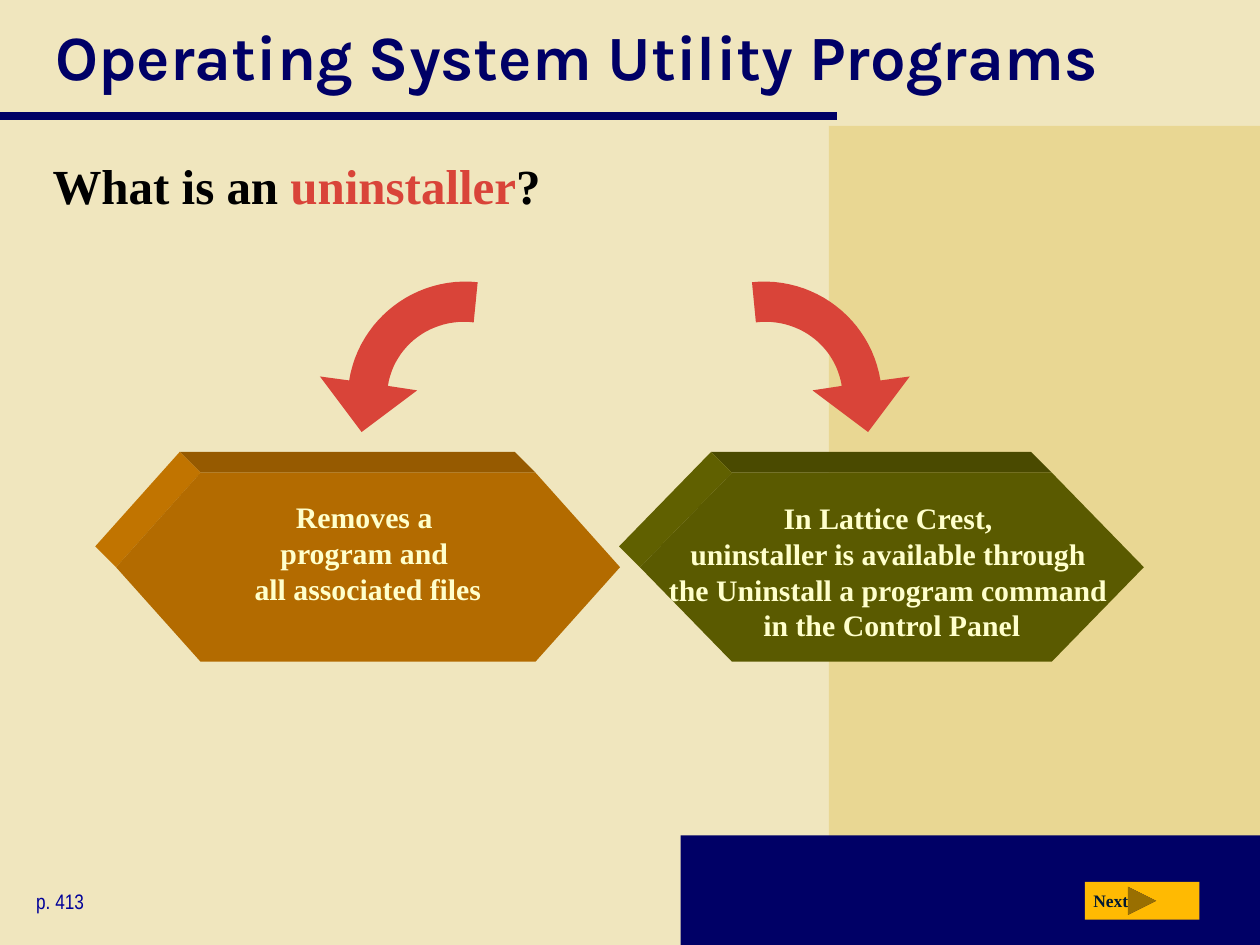
from pptx import Presentation
from pptx.dml.color import RGBColor
from pptx.enum.shapes import MSO_CONNECTOR, MSO_SHAPE
from pptx.enum.text import MSO_ANCHOR, PP_ALIGN
from pptx.oxml.ns import qn
from pptx.util import Cm, Pt
from lxml import etree

RECTANGLE = MSO_SHAPE.RECTANGLE
HEXAGON = MSO_SHAPE.HEXAGON
NEXT_BUTTON = MSO_SHAPE.ACTION_BUTTON_FORWARD_OR_NEXT
STRAIGHT = MSO_CONNECTOR.STRAIGHT
TOP, MIDDLE = MSO_ANCHOR.TOP, MSO_ANCHOR.MIDDLE
LEFT, CENTER = PP_ALIGN.LEFT, PP_ALIGN.CENTER

NAVY, RED, CREAM = "000066", "D94439", "FFFFCC"
SERIF = "Times New Roman"
DEPTH = 0.42
MIRROR_SUM = 24.79


def color(code):
    return RGBColor.from_string(code)


def write(box, text, size=17, font=SERIF, fill="000000", bold=True,
          align=LEFT, anchor=TOP, wrap=True, accents=None):
    frame = box.text_frame
    frame.word_wrap = wrap
    frame.vertical_anchor = anchor
    para = frame.paragraphs[0]
    para.alignment = align
    pieces = text if isinstance(text, list) else [text]
    for piece in pieces:
        for index, line in enumerate(piece.split("\n")):
            if index:
                para.add_line_break()
            span = para.add_run()
            span.text = line
            span.font.name = font
            span.font.size = Pt(size)
            span.font.bold = bold
            span.font.color.rgb = color((accents or {}).get(piece, fill))


def bezier(start, first, second, end, steps=24):
    points = []
    for step in range(steps + 1):
        t = step / steps
        weights = ((1 - t) ** 3, 3 * t * (1 - t) ** 2, 3 * t * t * (1 - t), t ** 3)
        points.append(tuple(
            sum(weight * point[axis] for weight, point in zip(weights, (start, first, second, end)))
            for axis in (0, 1)))
    return points


class SlideBuilder:
    """Hold the style and the current slide, and draw each kind of element."""

    def __init__(self, deck, background):
        self.page = deck.slides.add_slide(deck.slide_layouts[5])
        self.page.background.fill.solid()
        self.page.background.fill.fore_color.rgb = color(background)

    def paint(self, shape, fill):
        shape.shadow.inherit = False
        shape.fill.solid()
        shape.fill.fore_color.rgb = color(fill)
        shape.line.fill.background()
        return shape

    def title(self, text, left, top, width, height, **style):
        box = self.page.shapes.title
        box.left, box.top, box.width, box.height = map(Cm, (left, top, width, height))
        write(box, text, **style)

    def shape(self, kind, left, top, width, height, fill):
        shape = self.page.shapes.add_shape(kind, *map(Cm, (left, top, width, height)))
        return self.paint(shape, fill)

    def text(self, text, left, top, width, height, **style):
        box = self.page.shapes.add_textbox(*map(Cm, (left, top, width, height)))
        write(box, text, **style)
        return box

    def rule(self, left, top, right, fill, weight):
        line = self.page.shapes.add_connector(STRAIGHT, Cm(left), Cm(top), Cm(right), Cm(top))
        line.line.color.rgb = color(fill)
        line.line.width = Pt(weight)
        etree.SubElement(line._element.spPr, qn("a:effectLst"))

    def polygon(self, points, fill):
        corners = [(Cm(x), Cm(y)) for x, y in points]
        builder = self.page.shapes.build_freeform(*corners[0], scale=1.0)
        builder.add_line_segments(corners[1:], close=True)
        return self.paint(builder.convert_to_shape(), fill)

    def block(self, text, left, slant, front, top_face, side_face):
        top, width, height = 9.53, 10.16, 3.81
        cut = slant * height
        tip = (left, top + height / 2)
        near, far = (left + cut, top), (left + width - cut, top)
        for edge, fill in (((near, far), top_face), ((tip, near), side_face)):
            back = [(x - DEPTH, y - DEPTH) for x, y in edge]
            self.polygon(back + list(reversed(edge)), fill)
        face = self.shape(HEXAGON, left, top, width, height, front)
        face.adjustments[0] = slant
        face.text_frame.margin_top = face.text_frame.margin_bottom = 0
        write(face, text, fill=CREAM, align=CENTER, wrap=False)

    def curved_arrow(self, mirrored):
        outer = bezier((9.63, 5.69), (8.38, 5.56), (7.24, 6.43), (7.04, 7.67))
        head = [(6.45, 7.59), (7.29, 8.71), (8.41, 7.87)]
        inner = bezier((7.82, 7.78), (7.95, 6.96), (8.71, 6.4), (9.55, 6.5))
        points = outer + head + inner
        if mirrored:
            points = [(MIRROR_SUM - x, y) for x, y in points]
        self.polygon(points, RED)


def main():
    deck = Presentation()
    deck.slide_width, deck.slide_height = Cm(25.4), Cm(19.05)
    slide = SlideBuilder(deck, "F0E6BE")
    slide.shape(RECTANGLE, 16.71, 2.54, 8.69, 16.51, "E9D793")
    slide.shape(RECTANGLE, 13.72, 16.84, 11.68, 2.21, NAVY)
    slide.rule(0, 2.34, 16.87, NAVY, 5)
    slide.title("Operating System Utility Programs", 0.86, 0, 23.85, 2.24,
                size=36, font="Karla", fill=NAVY, anchor=MIDDLE)
    slide.text(["What is an ", "uninstaller", "?"], 0.81, 3.02, 23.85, 2.46,
               size=28, accents={"uninstaller": RED})

    button = slide.shape(NEXT_BUTTON, 21.87, 17.78, 2.31, 0.76, "FFBA02")
    label = slide.text("Next", 21.79, 17.81, 1.3, 0.69, size=10, fill="001932", wrap=False)
    slide.page.shapes.add_group_shape([button, label])
    slide.text("p. 413", 0.48, 17.78, 4.29, 0.76,
               size=12, font="Arial Narrow", fill="000099", bold=False)

    slide.block("In Lattice Crest, \nuninstaller is available through \n"
                "the Uninstall a program command \nin the Control Panel",
                12.9, 0.487, "5A5A00", "4A4A00", "606000")
    slide.block("Removes a \nprogram and \nall associated files",
                2.34, 0.447, "B36B00", "965A00", "C17400")
    for mirrored in (False, True):
        slide.curved_arrow(mirrored)
    deck.save("out.pptx")


if __name__ == "__main__":
    main()
